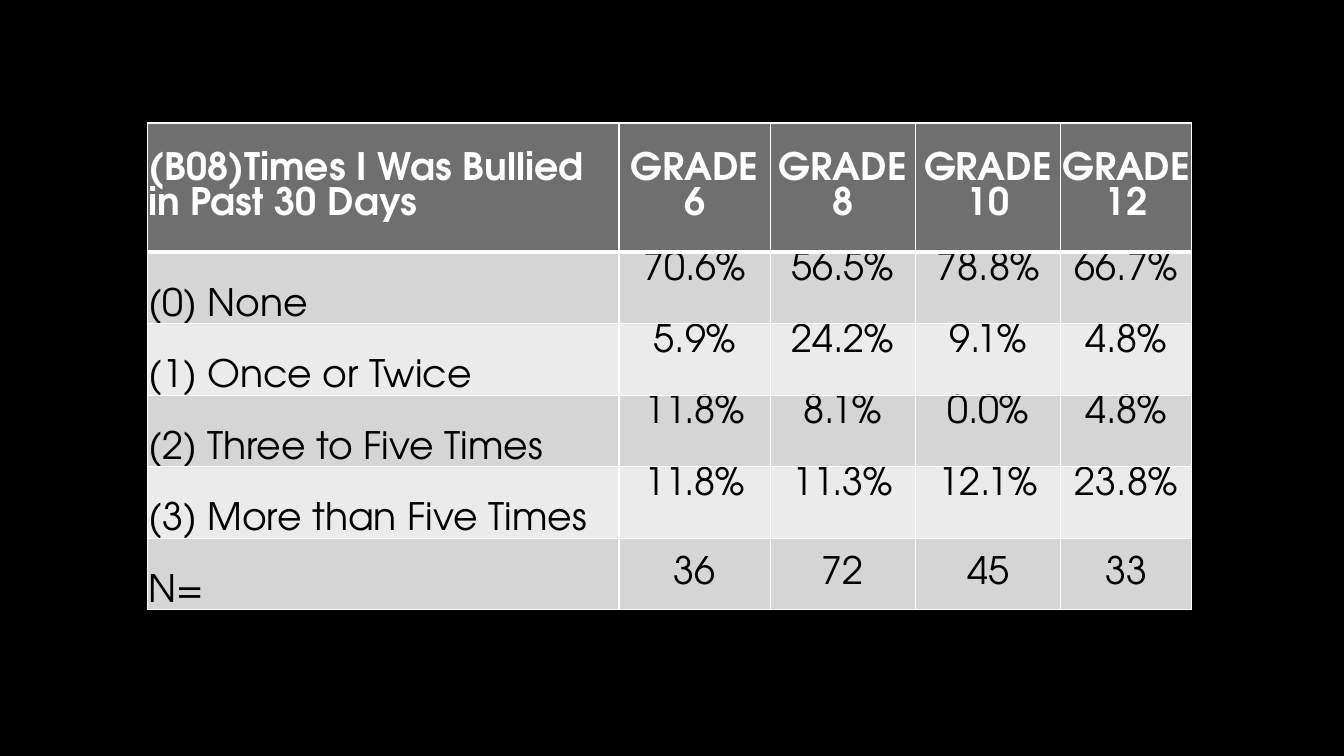
"""Build a slide with a table of bullying frequency by school grade."""
from lxml import etree
from pptx import Presentation
from pptx.dml.color import RGBColor
from pptx.enum.text import MSO_ANCHOR, PP_ALIGN
from pptx.oxml.ns import qn
from pptx.util import Inches, Pt

TOP, MIDDLE, BOTTOM = MSO_ANCHOR.TOP, MSO_ANCHOR.MIDDLE, MSO_ANCHOR.BOTTOM
LEFT, CENTER = PP_ALIGN.LEFT, PP_ALIGN.CENTER
BLANK_LAYOUT = 6

SURVEY = [
    ("(B08)Times I Was Bullied in Past 30 Days", "GRADE 6", "GRADE 8", "GRADE 10", "GRADE 12"),
    ("(0) None", "70.6%", "56.5%", "78.8%", "66.7%"),
    ("(1) Once or Twice", "5.9%", "24.2%", "9.1%", "4.8%"),
    ("(2) Three to Five Times", "11.8%", "8.1%", "0.0%", "4.8%"),
    ("(3) More than Five Times", "11.8%", "11.3%", "12.1%", "23.8%"),
    ("N=", "36", "72", "45", "33"),
]
COLUMN_WIDTHS = (4.68, 1.5, 1.44, 1.44, 1.3)
HEADER_HEIGHT, ANSWER_HEIGHT = 1.28, 0.71
TABLE_LEFT, TABLE_TOP = 1.46, 1.22
FONT, FONT_SIZE = "TeX Gyre Adventor", 27
BLACK, WHITE, HEADER_GRAY = "000000", "FFFFFF", "6F6F6F"
BANDS = ("EBEBEB", "D5D5D5")


def paint(fill, color):
    fill.solid()
    fill.fore_color.rgb = RGBColor.from_string(color)


def add_borders(cell, bottom_width):
    properties = cell._tc.get_or_add_tcPr()
    widths = {"a:lnL": 1, "a:lnR": 1, "a:lnT": 1, "a:lnB": bottom_width}
    for position, (side, width) in enumerate(widths.items()):
        line = etree.Element(qn(side), w=str(Pt(width)))
        solid = etree.SubElement(line, qn("a:solidFill"))
        etree.SubElement(solid, qn("a:srgbClr"), val=WHITE)
        properties.insert(position, line)


def anchor_for(row, column):
    if row == 0:
        return MIDDLE
    if column == 0:
        return BOTTOM
    return MIDDLE if row == len(SURVEY) - 1 else TOP


def fill_cell(cell, text, row, column):
    is_header = row == 0
    cell.text = text
    cell.vertical_anchor = anchor_for(row, column)
    cell.margin_left = cell.margin_right = cell.margin_top = Inches(0.01)
    cell.margin_bottom = 0
    paint(cell.fill, HEADER_GRAY if is_header else BANDS[row % 2])
    add_borders(cell, 3 if is_header else 1)
    paragraph = cell.text_frame.paragraphs[0]
    paragraph.alignment = LEFT if column == 0 else CENTER
    font = paragraph.font
    font.name, font.size, font.bold = FONT, Pt(FONT_SIZE), is_header
    paint(font.fill, WHITE if is_header else BLACK)


def main():
    deck = Presentation()
    deck.slide_width, deck.slide_height = Inches(13.33), Inches(7.5)
    slide = deck.slides.add_slide(deck.slide_layouts[BLANK_LAYOUT])
    paint(slide.background.fill, BLACK)

    row_heights = [HEADER_HEIGHT] + [ANSWER_HEIGHT] * (len(SURVEY) - 1)
    table = slide.shapes.add_table(
        len(SURVEY), len(COLUMN_WIDTHS), Inches(TABLE_LEFT), Inches(TABLE_TOP),
        Inches(sum(COLUMN_WIDTHS)), Inches(sum(row_heights))).table
    for column, width in zip(table.columns, COLUMN_WIDTHS):
        column.width = Inches(width)
    for row, height in zip(table.rows, row_heights):
        row.height = Inches(height)
    for row, answers in enumerate(SURVEY):
        for column, text in enumerate(answers):
            fill_cell(table.cell(row, column), text, row, column)
    deck.save("out.pptx")


if __name__ == "__main__":
    main()
